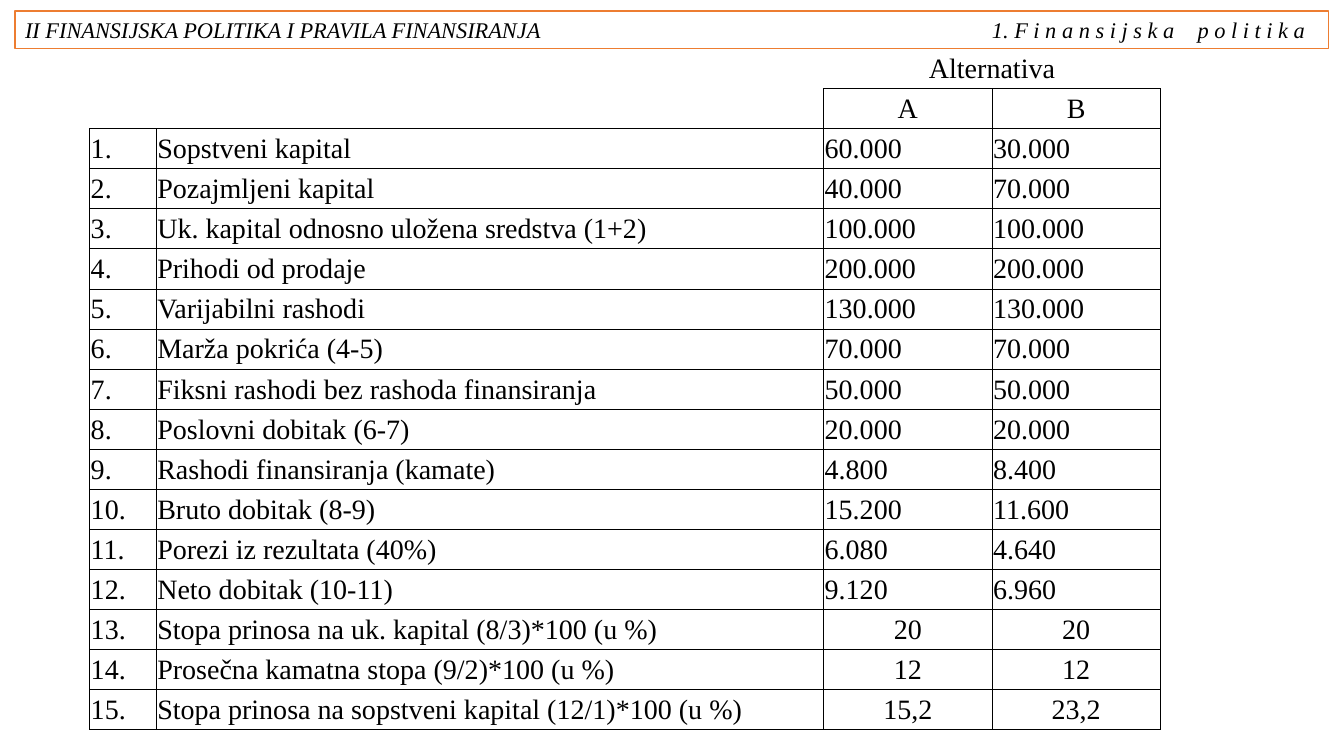
from lxml import etree
from pptx import Presentation
from pptx import util as u
from pptx.dml.color import RGBColor
from pptx.enum import shapes, text
from pptx.oxml.ns import qn

BLACK = RGBColor(0x00, 0x00, 0x00)
WHITE = RGBColor(0xFF, 0xFF, 0xFF)
ORANGE = RGBColor(0xED, 0x7D, 0x31)

COLUMN_WIDTHS = (0.66, 6.62, 1.67, 1.67)
HEADINGS = [("", "", "Alternativa", ""), ("", "", "A", "B")]
ITEMS = [
    ("Sopstveni kapital", "60.000", "30.000"),
    ("Pozajmljeni kapital", "40.000", "70.000"),
    ("Uk. kapital odnosno uložena sredstva (1+2)", "100.000", "100.000"),
    ("Prihodi od prodaje", "200.000", "200.000"),
    ("Varijabilni rashodi", "130.000", "130.000"),
    ("Marža pokrića (4-5)", "70.000", "70.000"),
    ("Fiksni rashodi bez rashoda finansiranja", "50.000", "50.000"),
    ("Poslovni dobitak (6-7)", "20.000", "20.000"),
    ("Rashodi finansiranja (kamate)", "4.800", "8.400"),
    ("Bruto dobitak (8-9)", "15.200", "11.600"),
    ("Porezi iz rezultata (40%)", "6.080", "4.640"),
    ("Neto dobitak (10-11)", "9.120", "6.960"),
    ("Stopa prinosa na uk. kapital (8/3)*100 (u %)", "20", "20"),
    ("Prosečna kamatna stopa (9/2)*100 (u %)", "12", "12"),
    ("Stopa prinosa na sopstveni kapital (12/1)*100 (u %)", "15,2", "23,2"),
]
FIRST_RATE_ROW = 14


def is_boxed(row, col):
    """Tell whether a cell has a full frame: all items, and the A and B headings."""
    return row >= 2 or (row == 1 and col >= 2)


class SlideBuilder:
    font_name = "Times New Roman"

    def __init__(self, slide):
        self.slide = slide

    def add_run(self, paragraph, wording, size, italic=False):
        run = paragraph.add_run()
        run.text = wording
        run.font.name = self.font_name
        run.font.size = u.Pt(size)
        run.font.italic = italic
        run.font.color.rgb = BLACK

    def add_tab_stops(self, paragraph, positions):
        stops = etree.SubElement(paragraph._p.get_or_add_pPr(), qn("a:tabLst"))
        for position in positions:
            etree.SubElement(stops, qn("a:tab"), pos=str(u.Inches(position)), algn="l")

    def add_header(self, parts, tab_positions):
        header = self.slide.shapes.add_shape(
            shapes.MSO_SHAPE.RECTANGLE,
            u.Inches(0.15), u.Inches(0.11), u.Inches(13.03), u.Inches(0.37))
        header.shadow.inherit = False
        header.fill.solid()
        header.fill.fore_color.rgb = WHITE
        header.line.color.rgb = ORANGE
        header.line.width = u.Pt(1)
        header.text_frame.word_wrap = True
        header.text_frame.auto_size = text.MSO_AUTO_SIZE.SHAPE_TO_FIT_TEXT
        line = header.text_frame.paragraphs[0]
        line.alignment = text.PP_ALIGN.LEFT
        self.add_tab_stops(line, tab_positions)
        for index, part in enumerate(parts):
            self.add_run(line, "\t" + part if index else part, 16, italic=True)

    def set_borders(self, cell, row, col):
        """Draw each edge that this cell or its neighbour needs."""
        neighbours = {"lnL": (row, col - 1), "lnR": (row, col + 1),
                      "lnT": (row - 1, col), "lnB": (row + 1, col)}
        for side, neighbour in neighbours.items():
            edge = etree.SubElement(cell._tc.get_or_add_tcPr(), qn("a:" + side),
                                    w=str(u.Pt(0.5)))
            if is_boxed(row, col) or is_boxed(*neighbour):
                paint = etree.SubElement(edge, qn("a:solidFill"))
                etree.SubElement(paint, qn("a:srgbClr"), val=str(BLACK))
            else:
                etree.SubElement(edge, qn("a:noFill"))

    def fill_cell(self, cell, wording, centred):
        cell.vertical_anchor = text.MSO_ANCHOR.MIDDLE
        cell.margin_left = cell.margin_right = cell.margin_top = u.Inches(0.01)
        cell.margin_bottom = 0
        if wording:
            paragraph = cell.text_frame.paragraphs[0]
            paragraph.alignment = (text.PP_ALIGN.CENTER if centred
                                   else text.PP_ALIGN.LEFT)
            self.add_run(paragraph, wording, 20)

    def add_comparison(self, rows):
        table = self.slide.shapes.add_table(
            len(rows), len(COLUMN_WIDTHS),
            u.Inches(0.89), u.Inches(0.48), u.Inches(10.63), u.Inches(6.76)).table
        table.first_row = table.horz_banding = False
        for column, width in zip(table.columns, COLUMN_WIDTHS):
            column.width = u.Inches(width)
        for row, wordings in enumerate(rows):
            for col, wording in enumerate(wordings):
                cell = table.cell(row, col)
                centred = col >= 2 and (row < len(HEADINGS) or row >= FIRST_RATE_ROW)
                self.fill_cell(cell, wording, centred)
                self.set_borders(cell, row, col)
                cell.fill.background()
        table.cell(0, 2).merge(table.cell(0, 3))


def main():
    deck = Presentation()
    deck.slide_width = u.Inches(13.33)
    deck.slide_height = u.Inches(7.5)
    builder = SlideBuilder(deck.slides.add_slide(deck.slide_layouts[6]))
    numbered = [(f"{number}.", *item) for number, item in enumerate(ITEMS, 1)]
    builder.add_comparison(HEADINGS + numbered)
    builder.add_header(
        ("II FINANSIJSKA POLITIKA I PRAVILA FINANSIRANJA",
         "1. F i n a n s i j s k a", "p o l i t i k a"),
        tab_positions=(9.59, 11.63))
    deck.save("out.pptx")


if __name__ == "__main__":
    main()
